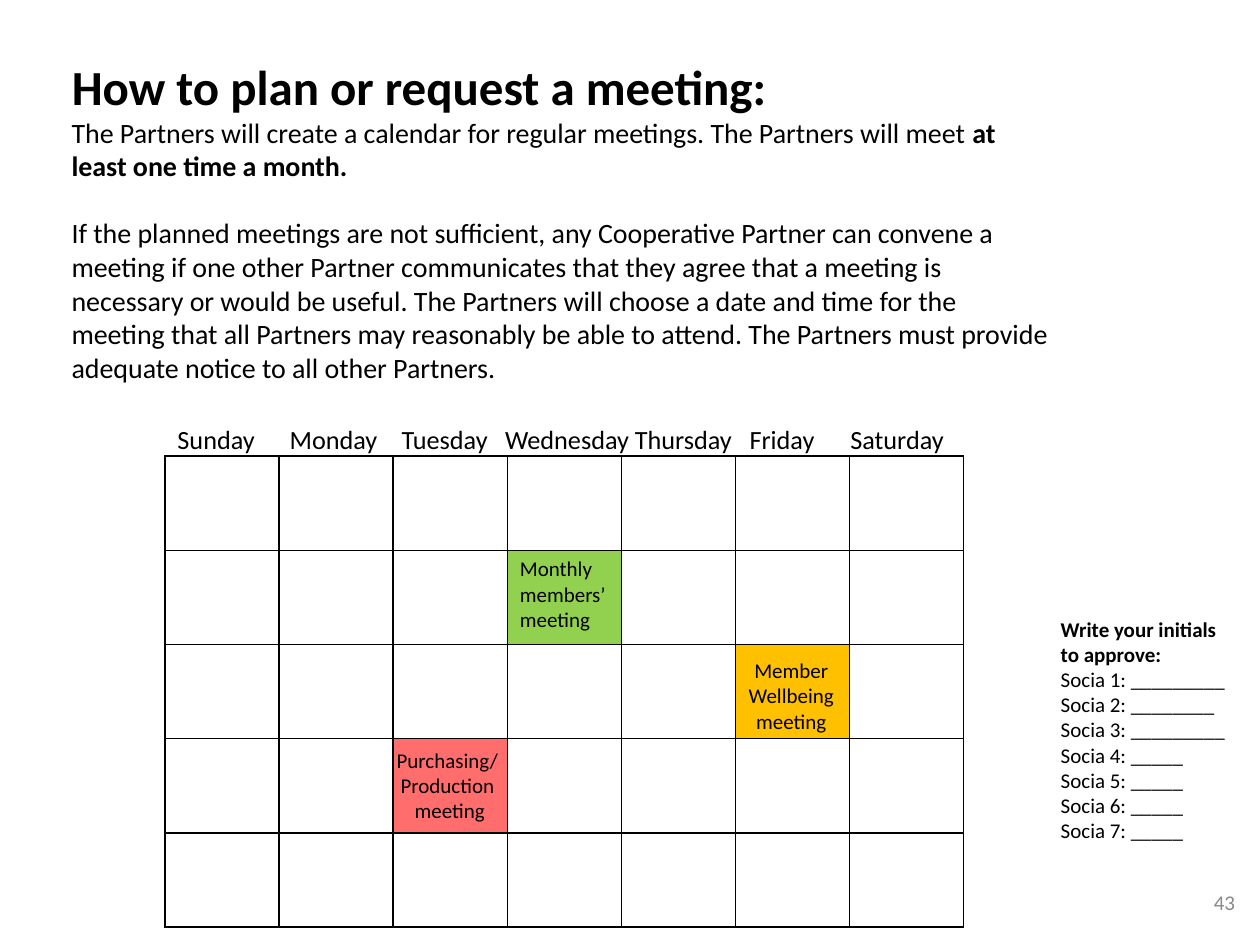
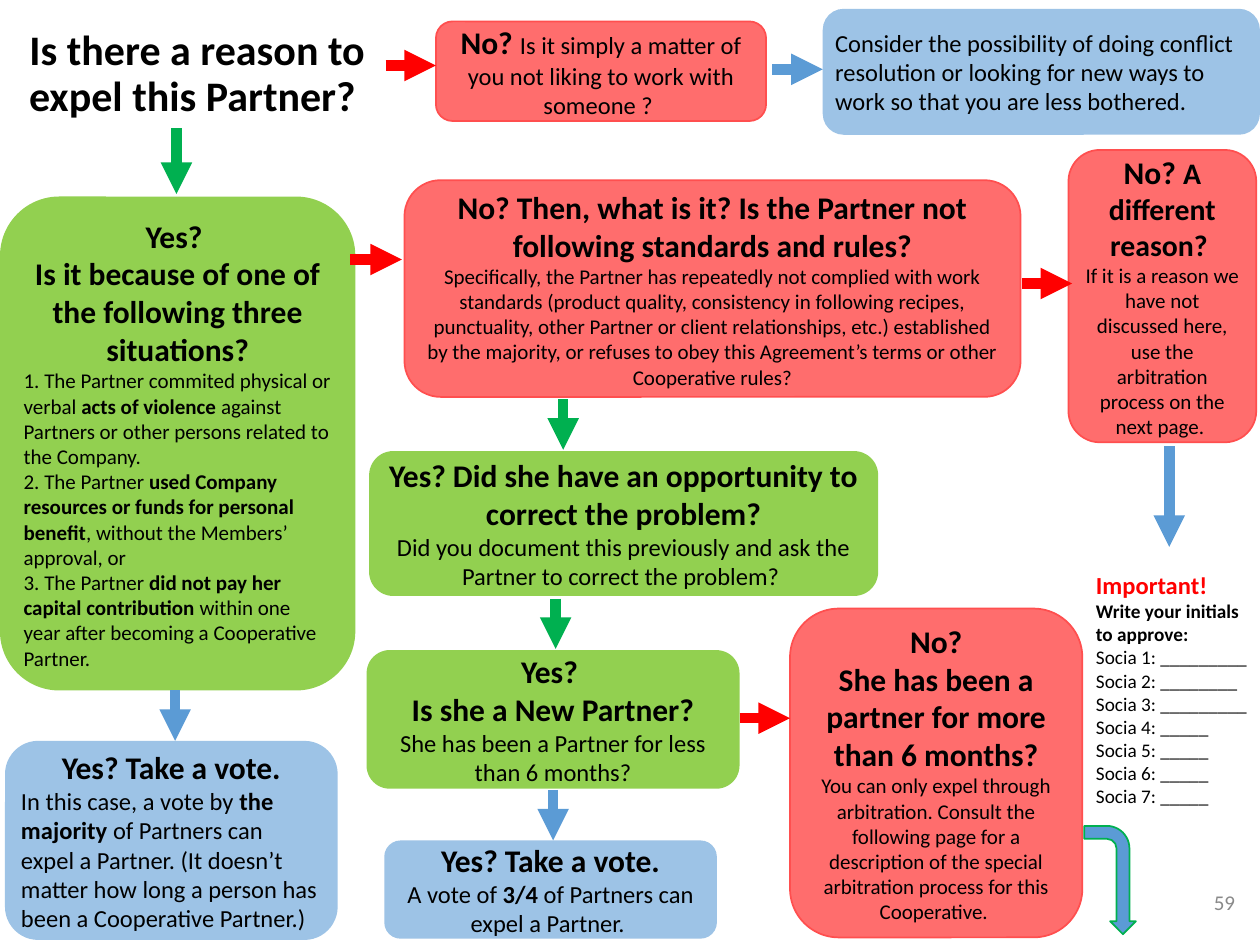
"""Two slides of a cooperative agreement: planning meetings and expelling a partner."""
from dataclasses import dataclass
from typing import Any, NamedTuple

import pptx
import pptx.dml.color
import pptx.enum.shapes
import pptx.enum.text
import pptx.oxml
import pptx.oxml.ns
import pptx.util

ALIGN = pptx.enum.text.PP_ALIGN
ANCHOR = pptx.enum.text.MSO_ANCHOR
SHAPE = pptx.enum.shapes.MSO_SHAPE

FONT = "Calibri"
BLACK, GREY, RED = "000000", "898989", "FF0000"
GREEN, PINK, PINK_EDGE, SKY, AMBER = "92D050", "FF6D6D", "FF4F4F", "9DC3E6", "FFC000"
BLUE_ARROW, GREEN_ARROW = "5B9BD5", "00B050"

# The slide is a grid of 100 columns by 75 rows.
WIDTH, HEIGHT = pptx.util.Inches(10), pptx.util.Inches(7.5)
COLUMNS, ROWS = 100, 75


class Area(NamedTuple):
    """Left column, top row, columns wide and rows high."""
    left: float
    top: float
    wide: float
    high: float

    def place(self) -> tuple[int, int, int, int]:
        return columns(self.left), rows(self.top), columns(self.wide), rows(self.high)


@dataclass(frozen=True)
class Para:
    """Words between asterisks are bold; the lead is an 18 pt bold opening."""
    text: str
    size: float = 12
    align: Any = ALIGN.LEFT
    color: str = BLACK
    lead: str = ""
    before: float = 0
    spacing: float = 1


@dataclass(frozen=True)
class Step:
    """A rounded box of the flow chart."""
    area: Area
    fill: str
    paras: list[Para]
    edge: str = ""


class Arrow(NamedTuple):
    left: float
    top: float
    across: float
    down: float
    color: str


def columns(count: float) -> int:
    return round(WIDTH * count / COLUMNS)


def rows(count: float) -> int:
    return round(HEIGHT * count / ROWS)


def rgb(color: str) -> pptx.dml.color.RGBColor:
    return pptx.dml.color.RGBColor.from_string(color)


def set_format(target: Any, values: dict[str, Any]) -> None:
    for name, value in values.items():
        setattr(target, name, value)


def center(text: str, size: float, **more: Any) -> Para:
    return Para(text, size, ALIGN.CENTER, **more)


def heading(text: str) -> Para:
    return center(f"*{text}*", 18)


def add_span(para: Any, text: str, size: float, bold: bool, color: str) -> None:
    span = para.add_run()
    span.text = text
    set_format(span.font, {"name": FONT, "size": pptx.util.Pt(size), "bold": bold})
    span.font.color.rgb = rgb(color)


def write(frame: Any, paras: list[Para]) -> None:
    for index, item in enumerate(paras):
        para = frame.add_paragraph() if index else frame.paragraphs[0]
        set_format(para, {"alignment": item.align, "line_spacing": item.spacing,
                          "space_before": pptx.util.Pt(item.before)})
        if item.lead:
            add_span(para, item.lead, 18, True, item.color)
        for part, text in enumerate(item.text.split("*")):
            if text:
                add_span(para, text, item.size, part % 2 == 1, item.color)


def add_text(slide: Any, area: Area, paras: list[Para], **values: Any) -> Any:
    box = slide.shapes.add_textbox(*area.place())
    set_format(box.text_frame, {"word_wrap": True, **values})
    write(box.text_frame, paras)
    return box


def set_title(slide: Any, area: Area, para: Para, anchor: Any) -> None:
    title = slide.shapes.title
    set_format(title, dict(zip(("left", "top", "width", "height"), area.place())))
    set_format(title.text_frame, {"word_wrap": True, "vertical_anchor": anchor,
                                  "auto_size": pptx.enum.text.MSO_AUTO_SIZE.NONE})
    write(title.text_frame, [para])


def add_page_number(slide: Any, number: int) -> None:
    add_text(slide, Area(76.5, 69.6, 22.5, 4), [Para(str(number), 12, ALIGN.RIGHT, GREY)],
             vertical_anchor=ANCHOR.MIDDLE)


def add_initials(slide: Any, area: Area, size: float, first: list[Para]) -> None:
    """Signing list for the seven partners."""
    blanks = (9, 8, 9, 5, 5, 5, 5)
    lines = ["*Write your initials*", "*to approve:*"]
    lines += [f"Socia {number}: {'_' * blank}" for number, blank in enumerate(blanks, 1)]
    add_text(slide, area, first + [Para(line, size) for line in lines], margin_right=0)


def paint(shape: Any, fill: str = "", edge: str = "") -> None:
    shape.shadow.inherit = False
    if fill:
        shape.fill.solid()
        shape.fill.fore_color.rgb = rgb(fill)
    else:
        shape.fill.background()
    if edge:
        shape.line.color.rgb = rgb(edge)
        shape.line.width = pptx.util.Pt(1)
    else:
        shape.line.fill.background()


def add_step(slide: Any, step: Step) -> None:
    shape = slide.shapes.add_shape(SHAPE.ROUNDED_RECTANGLE, *step.area.place())
    paint(shape, step.fill, step.edge)
    sides = ("margin_left", "margin_right", "margin_top", "margin_bottom")
    set_format(shape.text_frame, {"word_wrap": True, "vertical_anchor": ANCHOR.MIDDLE,
                                  **dict.fromkeys(sides, pptx.util.Inches(0.05))})
    write(shape.text_frame, step.paras)


def add_meeting(slide: Any, left: float, top: float, words: list[str]) -> None:
    """Unfilled oval with one centred word a line."""
    oval = slide.shapes.add_shape(SHAPE.OVAL, *Area(left, top, 23.2, 13.6).place())
    paint(oval)
    set_format(oval.text_frame, {"word_wrap": True, "vertical_anchor": ANCHOR.MIDDLE})
    write(oval.text_frame, [center(word, 12) for word in words])


def add_arrow(slide: Any, arrow: Arrow) -> None:
    line = slide.shapes.add_connector(
        pptx.enum.shapes.MSO_CONNECTOR.STRAIGHT, columns(arrow.left), rows(arrow.top),
        columns(arrow.left + arrow.across), rows(arrow.top + arrow.down))
    line.line.color.rgb = rgb(arrow.color)
    line.line.width = pptx.util.Pt(6)
    properties = line._element.spPr
    tail = pptx.oxml.ns.qn("a:tailEnd")
    line.line._get_or_add_ln().append(properties.makeelement(tail, {"type": "triangle"}))
    properties.append(properties.makeelement(pptx.oxml.ns.qn("a:effectLst"), {}))


def add_borders(cell: Any) -> None:
    properties = cell._tc.get_or_add_tcPr()
    for index, side in enumerate("LRTB"):
        properties.insert(index, pptx.oxml.parse_xml(
            f'<a:ln{side} {pptx.oxml.ns.nsdecls("a")} w="12700"><a:solidFill>'
            f'<a:srgbClr val="{BLACK}"/></a:solidFill></a:ln{side}>'))


def add_weekdays(slide: Any, area: Area, stops: dict[str, float]) -> None:
    """Day names in one line, each at a tab stop given in columns."""
    box = add_text(slide, area, [Para("".join(f"\t{day}" for day in stops), 15)])
    properties = box.text_frame.paragraphs[0]._p.get_or_add_pPr()
    tabs = "".join(f'<a:tab pos="{columns(stop)}" algn="l"/>' for stop in stops.values())
    properties.append(pptx.oxml.parse_xml(
        f'<a:tabLst {pptx.oxml.ns.nsdecls("a")}>{tabs}</a:tabLst>'))


def add_calendar(slide: Any, area: Area, weeks: int, days: int,
                 colors: dict[tuple[int, int], str]) -> Any:
    table = slide.shapes.add_table(weeks, days, *area.place()).table
    set_format(table, {"first_row": False, "horz_banding": False})
    for column in table.columns:
        column.width = columns(area.wide / days)
    for row in table.rows:
        row.height = rows(area.high / weeks)
    for week in range(weeks):
        for day in range(days):
            cell = table.cell(week, day)
            if (week, day) in colors:
                cell.fill.solid()
                cell.fill.fore_color.rgb = rgb(colors[week, day])
            else:
                cell.fill.background()
            add_borders(cell)
    return table


def build_meetings(slide: Any) -> None:
    set_title(slide, Area(4.7, 4, 79.7, 5.5),
              Para("*How to plan or request a meeting:*", 28), ANCHOR.TOP)
    add_text(slide, Area(4.7, 8.65, 79.7, 22.5), [
        Para("The Partners will create a calendar for regular meetings. The Partners will "
             "meet *at least one time a month.*", 16),
        Para("If the planned meetings are not sufficient, any Cooperative Partner can convene "
             "a meeting if one other Partner communicates that they agree that a meeting is "
             "necessary or would be useful. The Partners will choose a date and time for the "
             "meeting that all Partners may reasonably be able to attend. The Partners must "
             "provide adequate notice to all other Partners.", 16, before=19.2)])
    add_weekdays(slide, Area(12.6, 33.1, 63.9, 3.5), {
        "Sunday": 0.5, "Monday": 9.4, "Tuesday": 18.3, "Wednesday": 26.5,
        "Thursday": 36.8, "Friday": 45.9, "Saturday": 53.9})
    calendar = add_calendar(slide, Area(13.1, 36.2, 63.4, 37.4), 5, 7,
                            {(1, 3): GREEN, (2, 5): AMBER, (3, 2): PINK})
    write(calendar.cell(1, 3).text_frame, [Para("Monthly members’ meeting")])
    add_meeting(slide, 24.1, 55.5, ["Purchasing/ ", "Production ", "meeting"])
    add_meeting(slide, 51.2, 48.4, ["Member", "Wellbeing", "meeting"])
    add_initials(slide, Area(83.2, 48.4, 16.8, 21.2), 12, [])
    add_page_number(slide, 43)


EXPULSION_STEPS = [
    Step(Area(0, 15.6, 28.2, 39.2), GREEN, [
        heading("Yes? "),
        heading("Is it because of one of the following three situations?"),
        Para("1. The Partner commited physical or verbal *acts of violence *against Partners "
             "or other persons related to the Company."),
        Para("2. The Partner *used Company resources or funds for personal benefit*, without "
             "the Members’ approval, or"),
        Para("3. The Partner *did not pay her capital contribution *within one year after "
             "becoming a Cooperative Partner.")]),
    Step(Area(0.4, 58.8, 26.4, 15.8), SKY, [
        heading("Yes? Take a vote."),
        Para("In this case, a vote by *the majority *of Partners can expel a Partner. (It "
             "doesn’t matter how long a person has been a Cooperative Partner.)", 14)]),
    Step(Area(29.1, 51.6, 29.6, 11), GREEN, [
        heading("Yes? "), heading("Is she a New Partner?"),
        center("She has been a Partner for less than 6 months?", 14)]),
    Step(Area(34.6, 1.7, 26.2, 7.9), PINK, [
        center("Is it simply a matter of you not liking to work with someone ? ", 14,
               lead="No? ")], PINK_EDGE),
    Step(Area(65.3, 0.7, 34.7, 10), SKY, [
        Para("Consider the possibility of doing conflict resolution or looking for new ways "
             "to work so that you are less bothered.", 14)]),
    Step(Area(32.1, 14.3, 48.9, 17.2), PINK, [
        heading("No? Then, what is it? Is the Partner not following standards and rules?"),
        center("Specifically, the Partner has repeatedly not complied with work standards "
               "(product quality, consistency in following recipes, punctuality, other "
               "Partner or client relationships, etc.) established by the majority, or "
               "refuses to obey this Agreement’s terms or other Cooperative rules?", 12)],
         PINK_EDGE),
    Step(Area(30.5, 66.7, 26.4, 7.8), SKY, [
        heading("Yes? Take a vote."),
        center("A vote of *3/4 *of Partners can expel a Partner. ", 14)]),
    Step(Area(62.7, 48.3, 23.2, 26.1), PINK, [
        heading("No?"), heading("She has been a partner for more than 6 months?"),
        center("You can only expel through arbitration. Consult the following page for a "
               "description of the special arbitration process for this Cooperative. ", 12)],
         PINK_EDGE),
    Step(Area(29.3, 35.8, 40.4, 11.5), GREEN, [
        heading("Yes? Did she have an opportunity to correct the problem?"),
        center("Did you document this previously and ask the Partner to correct the "
               "problem? ", 14)]),
    Step(Area(84.8, 11.9, 14.9, 23.2), PINK, [
        center("*A different reason? *", 17, lead="No? "),
        center("If it is a reason we have not discussed here, use the arbitration process on "
               "the next page. ", 12)], PINK_EDGE),
]

EXPULSION_ARROWS = [
    Arrow(30.6, 5.2, 4, 0, RED), Arrow(27.8, 20.6, 4.1, 0, RED),
    Arrow(58.7, 57, 4, 0, RED), Arrow(81.1, 22.5, 4, 0, RED),
    Arrow(61.3, 5.5, 4, 0, BLUE_ARROW), Arrow(13.9, 54.8, 0, 4, BLUE_ARROW),
    Arrow(43.9, 62.7, 0, 4, BLUE_ARROW), Arrow(92.8, 35.4, 0, 8, BLUE_ARROW),
    Arrow(14, 10.2, 0, 5.2, GREEN_ARROW), Arrow(44.1, 47.5, 0, 4, GREEN_ARROW),
    Arrow(44.7, 31.7, 0, 4, GREEN_ARROW),
]


def build_expulsion(slide: Any) -> None:
    set_title(slide, Area(-0.5, -1.3, 32.3, 14.5),
              center("*Is there a reason to expel this Partner? *", 24, spacing=0.9),
              ANCHOR.MIDDLE)
    for step in EXPULSION_STEPS:
        add_step(slide, step)
    for arrow in EXPULSION_ARROWS:
        add_arrow(slide, arrow)
    turn = slide.shapes.add_shape(SHAPE.BENT_ARROW, *Area(83.8, 67.8, 8.6, 4.1).place())
    turn.rotation = 90
    paint(turn, BLUE_ARROW, GREEN_ARROW)
    add_initials(slide, Area(86, 44.75, 14, 23.7), 11, [Para("*Important!*", 14, color=RED)])
    add_page_number(slide, 59)


def main() -> None:
    deck = pptx.Presentation()
    set_format(deck, {"slide_width": WIDTH, "slide_height": HEIGHT})
    title_only = deck.slide_layouts.get_by_name("Title Only")
    for build in (build_meetings, build_expulsion):
        build(deck.slides.add_slide(title_only))
    deck.save("out.pptx")


if __name__ == "__main__":
    main()
